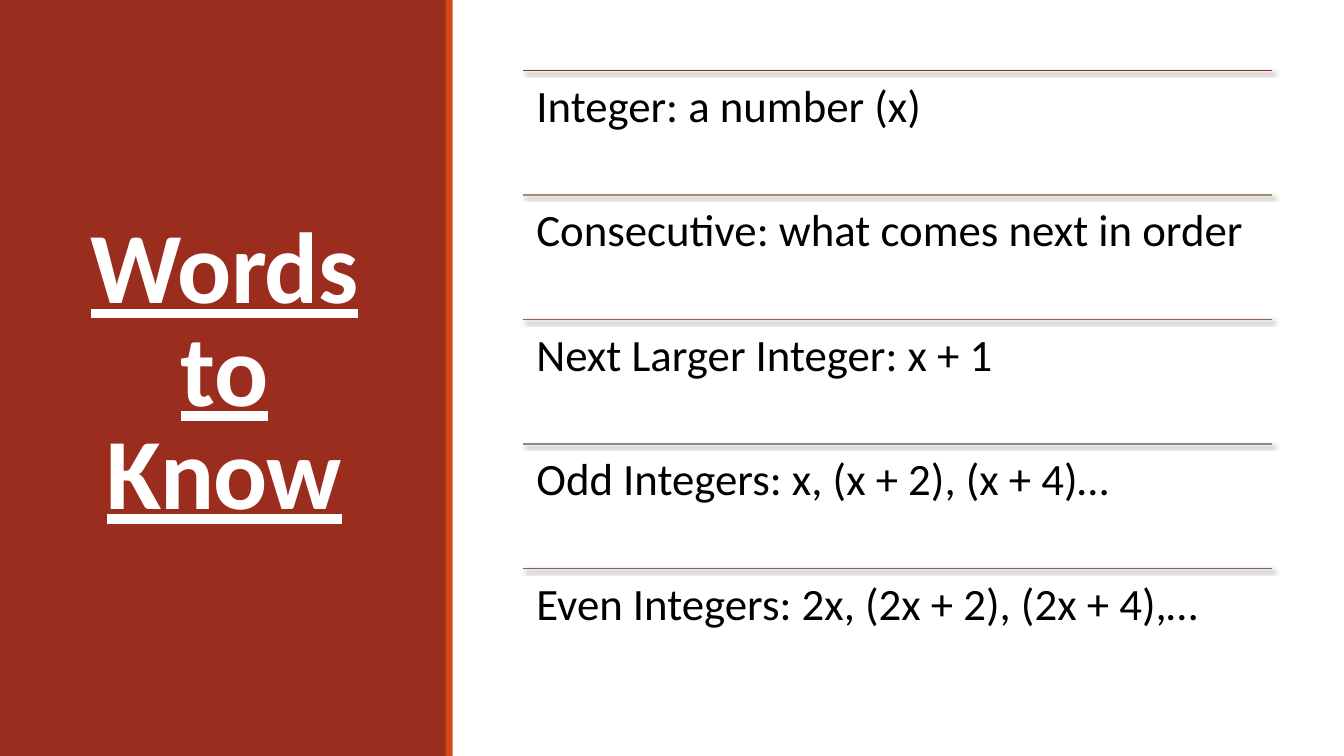
from dataclasses import dataclass

from lxml import etree
from pptx import Presentation
from pptx.dml.color import RGBColor
from pptx.enum import shapes, text
from pptx.oxml import ns
from pptx import util as u

WIDTH, HEIGHT = u.Inches(13.33), u.Inches(7.5)
LIST_LEFT, LIST_TOP = u.Inches(5.19), u.Inches(0.7)
LIST_WIDTH, ROW_HEIGHT = u.Inches(7.43), u.Inches(1.235)


@dataclass(frozen=True)
class Theme:
    font: str = "Calibri"
    title_size: int = 72
    body_size: int = 32
    panel: str = "9B2D1F"
    accent: str = "D34817"
    light: str = "FFFFFF"
    dark: str = "000000"


THEME = Theme()

DEFINITIONS = [
    ("Integer: a number (x)", "9B2D1F"),
    ("Consecutive: what comes next in order", "A28E6A"),
    ("Next Larger Integer: x + 1", "956251"),
    ("Odd Integers: x, (x + 2), (x + 4)…", "918485"),
    ("Even Integers: 2x, (2x + 2), (2x + 4),…", "855D5D"),
]


def add_span(para, words, size, color):
    span = para.add_run()
    span.text = words
    span.font.name = THEME.font
    span.font.size = u.Pt(size)
    span.font.color.rgb = RGBColor.from_string(color)
    return span


def add_band(page, left, width, color):
    """Add a full-height vertical band."""
    band = page.shapes.add_shape(
        shapes.MSO_SHAPE.RECTANGLE, left, 0, width, HEIGHT)
    band.shadow.inherit = False
    band.fill.solid()
    band.fill.fore_color.rgb = RGBColor.from_string(color)
    band.line.fill.background()


def set_title(page, words):
    title = page.shapes.title
    title.left, title.top = u.Inches(0.54), u.Inches(0.57)
    title.width, title.height = u.Inches(3.37), u.Inches(6.31)
    frame = title.text_frame
    frame.word_wrap = True
    frame.auto_size = text.MSO_AUTO_SIZE.NONE
    frame.vertical_anchor = text.MSO_ANCHOR.MIDDLE
    para = frame.paragraphs[0]
    para.alignment = text.PP_ALIGN.CENTER
    para.line_spacing = 0.85
    span = add_span(para, words, THEME.title_size, THEME.light)
    span.font.bold = True
    span.font.underline = True
    span.font._element.set("spc", "-50")
    # Bring the title in front of the panel.
    title.element.getparent().append(title.element)


def add_shadow(line):
    effects = etree.SubElement(line.element.spPr, ns.qn("a:effectLst"))
    shadow = etree.SubElement(
        effects, ns.qn("a:outerShdw"), blurRad=str(u.Pt(3)),
        dist=str(u.Pt(2)), dir=str(45 * 60000), algn="ctr", rotWithShape="0")
    color = etree.SubElement(shadow, ns.qn("a:srgbClr"), val=THEME.dark)
    etree.SubElement(color, ns.qn("a:alpha"), val="60000")


def add_rule(page, top, color):
    line = page.shapes.add_connector(
        shapes.MSO_CONNECTOR.STRAIGHT,
        LIST_LEFT, top, LIST_LEFT + LIST_WIDTH, top)
    line.line.color.rgb = RGBColor.from_string(color)
    line.line.width = u.Pt(1)
    add_shadow(line)


def add_definition(page, top, words):
    box = page.shapes.add_textbox(LIST_LEFT, top, LIST_WIDTH, ROW_HEIGHT)
    frame = box.text_frame
    frame.word_wrap = True
    frame.margin_left = frame.margin_right = u.Inches(0.13)
    frame.margin_top = frame.margin_bottom = u.Inches(0.13)
    para = frame.paragraphs[0]
    para.line_spacing = 0.9
    add_span(para, words, THEME.body_size, THEME.dark)


def main():
    deck = Presentation()
    deck.slide_width, deck.slide_height = WIDTH, HEIGHT
    page = deck.slides.add_slide(deck.slide_layouts.get_by_name("Title Only"))
    page.background.fill.solid()
    page.background.fill.fore_color.rgb = RGBColor.from_string(THEME.light)

    add_band(page, 0, u.Inches(4.43), THEME.panel)
    set_title(page, "Words to Know")
    add_band(page, u.Inches(4.42), u.Inches(0.07), THEME.accent)
    for row, (words, color) in enumerate(DEFINITIONS):
        top = LIST_TOP + row * ROW_HEIGHT
        add_rule(page, top, color)
        add_definition(page, top, words)

    deck.save("out.pptx")


if __name__ == "__main__":
    main()
